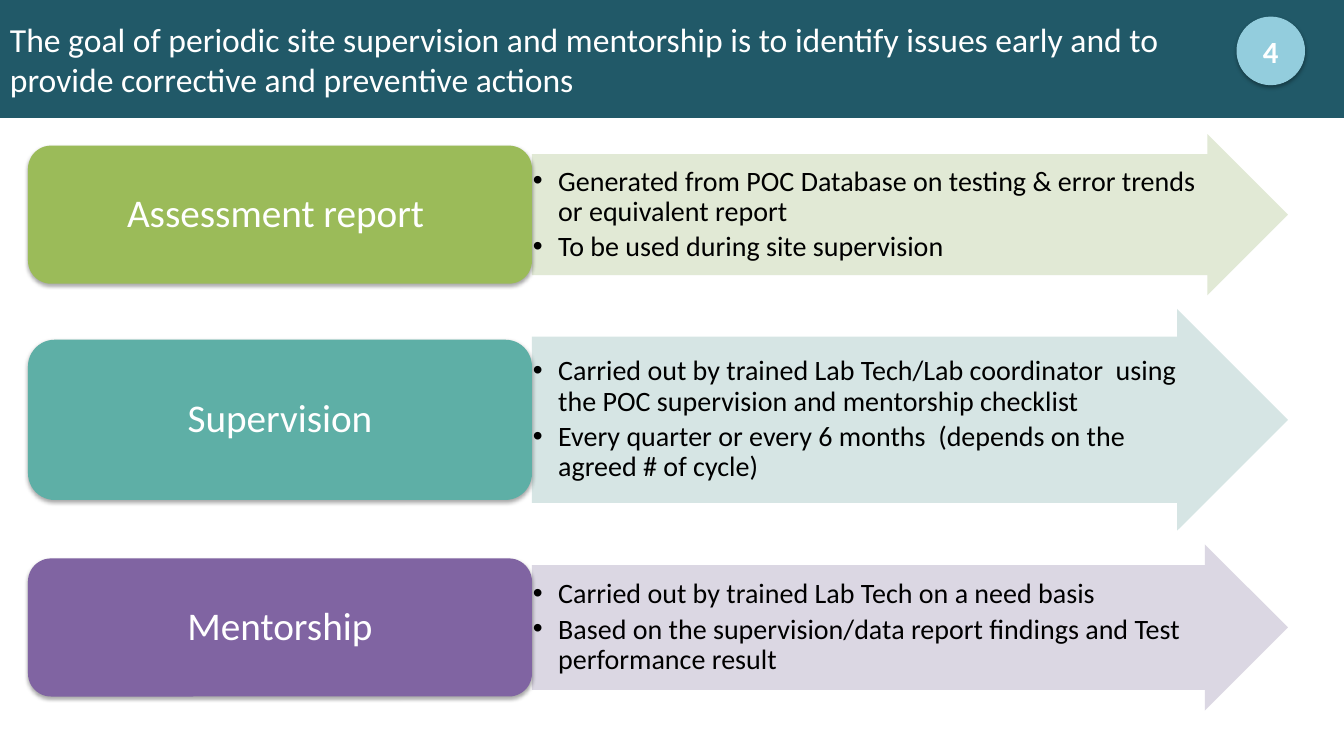
from dataclasses import dataclass

from lxml.etree import SubElement
from pptx import Presentation
from pptx.dml.color import RGBColor
from pptx.enum.shapes import MSO_SHAPE
from pptx.enum.text import MSO_ANCHOR, PP_ALIGN
from pptx.oxml.ns import qn
from pptx.shapes.autoshape import Shape
from pptx.util import Emu, Inches, Pt

WIDE, HIGH = Inches(13.33), Inches(7.5)
COLS, ROWS = 48, 75
FONT = "Calibri"
HUES = {
    "title": "215968", "badge": "93CDDD", "white": "FFFFFF", "black": "000000",
    "green": "9BBB59", "pale green": "DEE7D1",
    "teal": "5EAFA6", "pale teal": "D2E3E2",
    "purple": "8064A2", "pale purple": "D8D3E0",
}


@dataclass
class Step:
    name: str
    hue: str
    tall: float  # arrow height in rows
    card: float  # card height in rows
    notes: list[str]


STEPS = [
    Step("Assessment report ", "green", 16, 13.7, [
        "Generated from POC Database on testing & error trends or equivalent report",
        "To be used during site supervision",
    ]),
    Step("Supervision", "teal", 22, 15.9, [
        "Carried out by trained Lab Tech/Lab coordinator  using the POC supervision and mentorship checklist",
        "Every quarter or every 6 months  (depends on the agreed # of cycle)",
    ]),
    Step("Mentorship", "purple", 16.5, 13.7, [
        "Carried out by trained Lab Tech on a need basis",
        "Based on the supervision/data report findings and Test performance result",
    ]),
]
TOP, GAP = 13.3, 1.35  # first arrow and space between arrows, in rows


def col(count: float) -> Emu:
    return Emu(round(WIDE * count / COLS))


def row(count: float) -> Emu:
    return Emu(round(HIGH * count / ROWS))


def tint(hue: str) -> RGBColor:
    return RGBColor.from_string(HUES[hue])


def draw(kind: MSO_SHAPE, left: float, top: float, wide: float, tall: float,
         hue: str, alpha: int = 100, shade: bool = False) -> Shape:
    """Add a filled shape without outline, placed in columns and rows."""
    shape = slide.shapes.add_shape(kind, col(left), row(top), col(wide), row(tall))
    shape.shadow.inherit = False
    shape.fill.solid()
    shape.fill.fore_color.rgb = tint(hue)
    shape.line.fill.background()
    props = shape.element.spPr
    if alpha < 100:
        tone = props.find(qn("a:solidFill"))[0]
        SubElement(tone, qn("a:alpha"), val=str(alpha * 1000))
    if shade:
        glow = SubElement(props.find(qn("a:effectLst")), qn("a:outerShdw"),
                          blurRad=str(Pt(3.1)), dist=str(Pt(1.8)),
                          dir="5400000", rotWithShape="0")
        dark = SubElement(glow, qn("a:srgbClr"), val=HUES["black"])
        SubElement(dark, qn("a:alpha"), val="35000")
    return shape


def write(shape: Shape, lines: list[str], size: float, hue: str = "white",
          align: PP_ALIGN = PP_ALIGN.CENTER, bold: bool = False, dots: bool = False,
          pad: tuple[float, float] = (0.1, 0.05), space: float = 1) -> None:
    """Fill a shape with paragraphs; pad gives side and top insets in inches."""
    frame = shape.text_frame
    frame.word_wrap = True
    frame.vertical_anchor = MSO_ANCHOR.MIDDLE
    frame.margin_left = frame.margin_right = Inches(pad[0])
    frame.margin_top = frame.margin_bottom = Inches(pad[1])
    frame.text = "\n".join(lines)
    for para in frame.paragraphs:
        para.alignment = align
        para.line_spacing = space
        for run in para.runs:
            font = run.font
            font.name, font.size, font.bold = FONT, Pt(size), bold
            font.color.rgb = tint(hue)
        if dots:
            para.space_after = Pt(3.6)
            props = para._p.get_or_add_pPr()
            props.set("marL", str(Inches(0.25)))
            props.set("indent", str(Inches(-0.25)))
            SubElement(props, qn("a:buFont"), typeface="Arial")
            SubElement(props, qn("a:buChar"), char="•")


deck = Presentation()
deck.slide_width, deck.slide_height = WIDE, HIGH
slide = deck.slides.add_slide(deck.slide_layouts[6])

# Steps: an arrow with notes and a card with the name, on a shared middle
top = TOP
for step in STEPS:
    arrow = draw(MSO_SHAPE.RIGHT_ARROW, 19, top, 27, step.tall, "pale " + step.hue, alpha=90)
    arrow.adjustments[0], arrow.adjustments[1] = 0.75, 0.5
    write(arrow, step.notes, 20, hue="black", align=PP_ALIGN.LEFT, dots=True,
          pad=(0.01, 0.01), space=0.9)
    card = draw(MSO_SHAPE.ROUNDED_RECTANGLE, 1, top + (step.tall - step.card) / 2,
                18, step.card, step.hue, shade=True)
    write(card, [step.name], 28, pad=(0.12, 0.06), space=0.9)
    top += step.tall + GAP

# Title band
band = draw(MSO_SHAPE.RECTANGLE, 0, 0, COLS, 11.7, "title")
write(band, ["The goal of periodic site supervision and mentorship is to identify issues early and to "
             "\vprovide corrective and preventive actions"], 24, align=PP_ALIGN.LEFT)

# Page badge
badge = draw(MSO_SHAPE.OVAL, 44.18, 1.7, 2.41, 6.7, "badge", shade=True)
badge.line.color.rgb = tint("badge")
badge.line.width = Pt(0.75)
write(badge, ["4"], 22, bold=True, pad=(0, 0))

deck.save("out.pptx")
